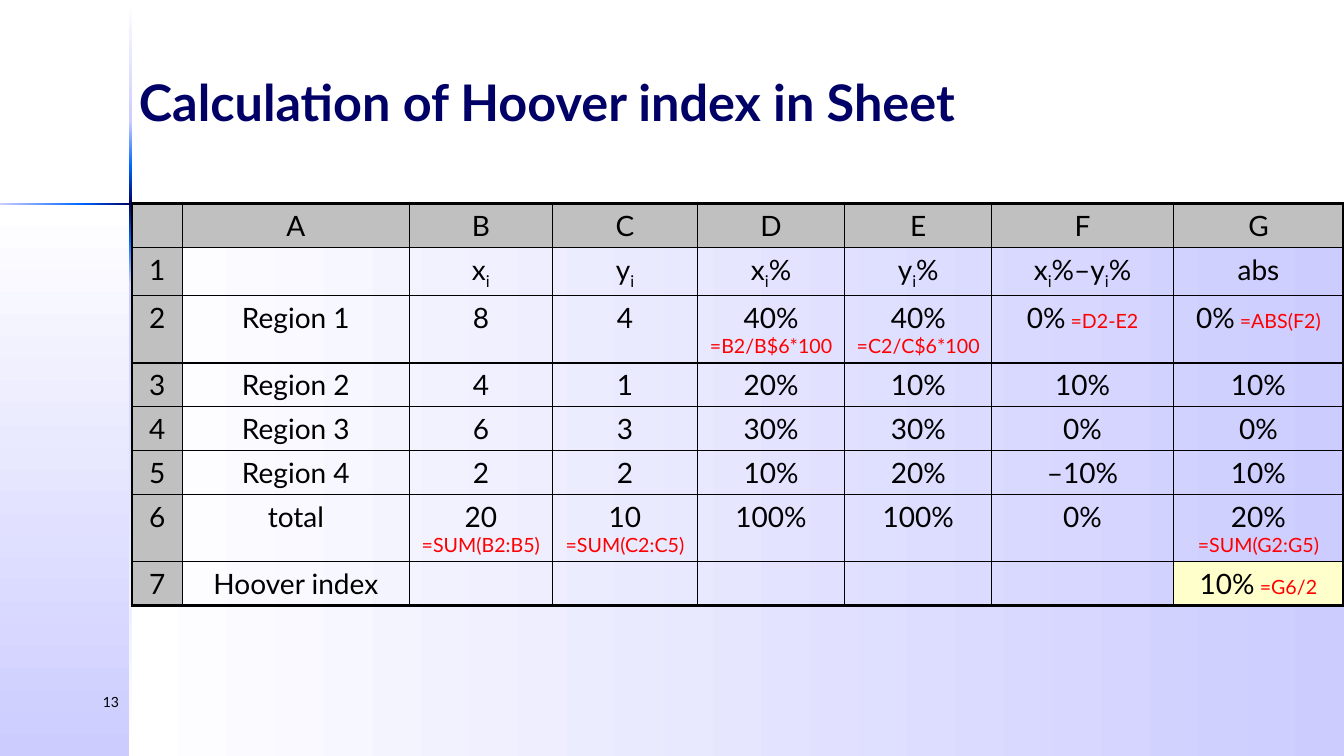
from dataclasses import dataclass
from itertools import pairwise

from lxml.etree import SubElement as Sub
from pptx import Presentation
from pptx.dml.color import RGBColor as Rgb
from pptx.enum.shapes import MSO_SHAPE as Shape
from pptx.enum.text import MSO_ANCHOR as Anchor, PP_ALIGN as Align
from pptx.oxml.ns import qn
from pptx.util import Inches, Pt


@dataclass(frozen=True)
class Theme:
    font: str = "Lato"
    white: str = "FFFFFF"
    pale: str = "CCCCFF"
    blue: str = "0066FF"
    navy: str = "000066"
    ink: str = "000000"
    red: str = "FF0000"
    gray: str = "C0C0C0"
    cream: str = "FFFFCC"
    title: int = 36
    body: int = 20
    note: int = 14
    small: int = 10
    thin: float = 1
    thick: float = 2.25


class Deck:
    """Draws on one slide; all lengths are percentages of its size."""

    def __init__(self, theme):
        self.theme = theme
        self.prs = Presentation()
        self.prs.slide_width = Inches(13.33)
        self.prs.slide_height = Inches(7.5)
        self.slide = self.prs.slides.add_slide(self.prs.slide_layouts[6])

    def wide(self, share):
        return round(self.prs.slide_width * share / 100)

    def high(self, share):
        return round(self.prs.slide_height * share / 100)

    def box(self, x, y, w, h):
        return self.wide(x), self.high(y), self.wide(w), self.high(h)

    def style(self, font, size, color, bold=False):
        font.name, font.size, font.bold = self.theme.font, Pt(size), bold
        font.color.rgb = Rgb.from_string(color)

    def blend(self, x, y, w, h, colors, angle):
        """Add a rectangle with evenly spaced gradient colours."""
        rect = self.slide.shapes.add_shape(Shape.RECTANGLE, *self.box(x, y, w, h))
        rect.shadow.inherit = False
        rect.line.fill.background()
        rect.fill.gradient()
        rect.fill.gradient_angle = -angle % 360
        stops = next(rect._element.iter(qn("a:gsLst")))
        stops.clear()
        for i, color in enumerate(colors):
            stop = Sub(stops, qn("a:gs"), pos=str(100000 * i // (len(colors) - 1)))
            Sub(stop, qn("a:srgbClr"), val=color)

    def text(self, x, y, w, h, words, size, color, align, anchor, bold=False):
        frame = self.slide.shapes.add_textbox(*self.box(x, y, w, h)).text_frame
        frame.word_wrap = True
        frame.vertical_anchor = anchor
        para = frame.paragraphs[0]
        para.text, para.alignment = words, align
        self.style(para.font, size, color, bold)

    def enter(self, cell, words):
        """Fill a cell; "_i" is a subscript and "|" starts a red formula."""
        t = self.theme
        para = cell.text_frame.paragraphs[0]
        para.alignment = Align.CENTER
        self.style(para.font, t.body, t.ink)
        value, _, formula = words.partition("|")
        for i, part in enumerate(value.split("_i")):
            if i:
                sub = para.add_run()
                sub.text = "i"
                sub._r.get_or_add_rPr().set("baseline", "-25000")
            if part:
                para.add_run().text = part
        if formula:
            run = para.add_run()
            run.text = " " + formula
            self.style(run.font, t.note, t.red)

    def edge(self, cell, sides):
        """Draw cell borders; sides maps L, R, T, B to whether they are outer."""
        t = self.theme
        for side, outer in sides.items():
            width = Pt(t.thick if outer else t.thin)
            line = Sub(cell._tc.get_or_add_tcPr(), qn("a:ln" + side), w=str(width))
            Sub(Sub(line, qn("a:solidFill")), qn("a:srgbClr"), val=t.ink)

    def table(self, x, y, cols, rows, data, fill):
        grid = self.slide.shapes.add_table(
            len(rows), len(cols), *self.box(x, y, sum(cols), sum(rows))).table
        grid.first_row = grid.horz_banding = False
        for col, w in zip(grid.columns, cols):
            col.width = self.wide(w)
        for row, h in zip(grid.rows, rows):
            row.height = self.high(h)
        end_r, end_c = len(rows) - 1, len(cols) - 1
        for r, line in enumerate(data):
            for c, words in enumerate(line):
                cell = grid.cell(r, c)
                self.enter(cell, words)
                self.edge(cell, {"L": c == 0, "R": c == end_c,
                                 "T": r == 0, "B": r == end_r})
                color = fill(r, c)
                if color:
                    cell.fill.solid()
                    cell.fill.fore_color.rgb = Rgb.from_string(color)
                else:
                    cell.fill.background()


DATA = [
    ["", "A", "B", "C", "D", "E", "F", "G"],
    ["1", "", "x_i", "y_i", "x_i%", "y_i%", "x_i%–y_i%", "abs"],
    ["2", "Region 1", "8", "4", "40%|=B2/B$6*100", "40%|=C2/C$6*100",
     "0%|=D2-E2", "0%|=ABS(F2)"],
    ["3", "Region 2", "4", "1", "20%", "10%", "10%", "10%"],
    ["4", "Region 3", "6", "3", "30%", "30%", "0%", "0%"],
    ["5", "Region 4", "2", "2", "10%", "20%", "–10%", "10%"],
    ["6", "total", "20|=SUM(B2:B5)", "10|=SUM(C2:C5)", "100%", "100%", "0%",
     "20%|=SUM(G2:G5)"],
    ["7", "Hoover index", "", "", "", "", "", "10%|=G6/2"],
]
LEFT, TOP = 9.65, 26.93
COLS = [3.75, 16.88, 10.65, 10.8, 10.95, 10.95, 13.5, 12.68]
ROWS = [5.78, 6.33, 8.87, 5.81, 5.81, 5.81, 8.87, 5.81]


def main():
    t = Theme()
    deck = Deck(t)

    deck.blend(LEFT, TOP, 100 - LEFT, 100 - TOP, [t.white, t.pale], 0)
    deck.blend(0, TOP, LEFT, 100 - TOP, [t.white, t.pale], 90)
    glow = [[t.white, t.pale], [t.pale, t.blue], [t.blue, t.navy, t.blue],
            [t.blue, t.pale], [t.pale, t.white]]
    downs = pairwise([0.13, 16.13, 22, 31.73, 37.6, 100])
    for (top, end), colors in zip(downs, glow):
        deck.blend(9.6, top, 0.23, end - top, colors, 90)
    across = pairwise([0, 6.08, 13.35, 17.7, 100])
    for (left, end), colors in zip(across, glow[1:]):
        deck.blend(left, 26.8, end - left, 0.27, colors, 0)

    deck.text(0, 91.07, 9.6, 6.67, "13", t.small, t.ink, Align.RIGHT, Anchor.TOP)
    deck.text(9.6, 0, 90.4, TOP, "Calculation of Hoover index in Sheet",
              t.title, t.navy, Align.LEFT, Anchor.MIDDLE, bold=True)

    def fill(r, c):
        if r == 0 or c == 0:
            return t.gray
        return t.cream if (r, c) == (len(ROWS) - 1, len(COLS) - 1) else None

    deck.table(9.83, TOP, COLS, ROWS, DATA, fill)
    deck.prs.save("out.pptx")


if __name__ == "__main__":
    main()
